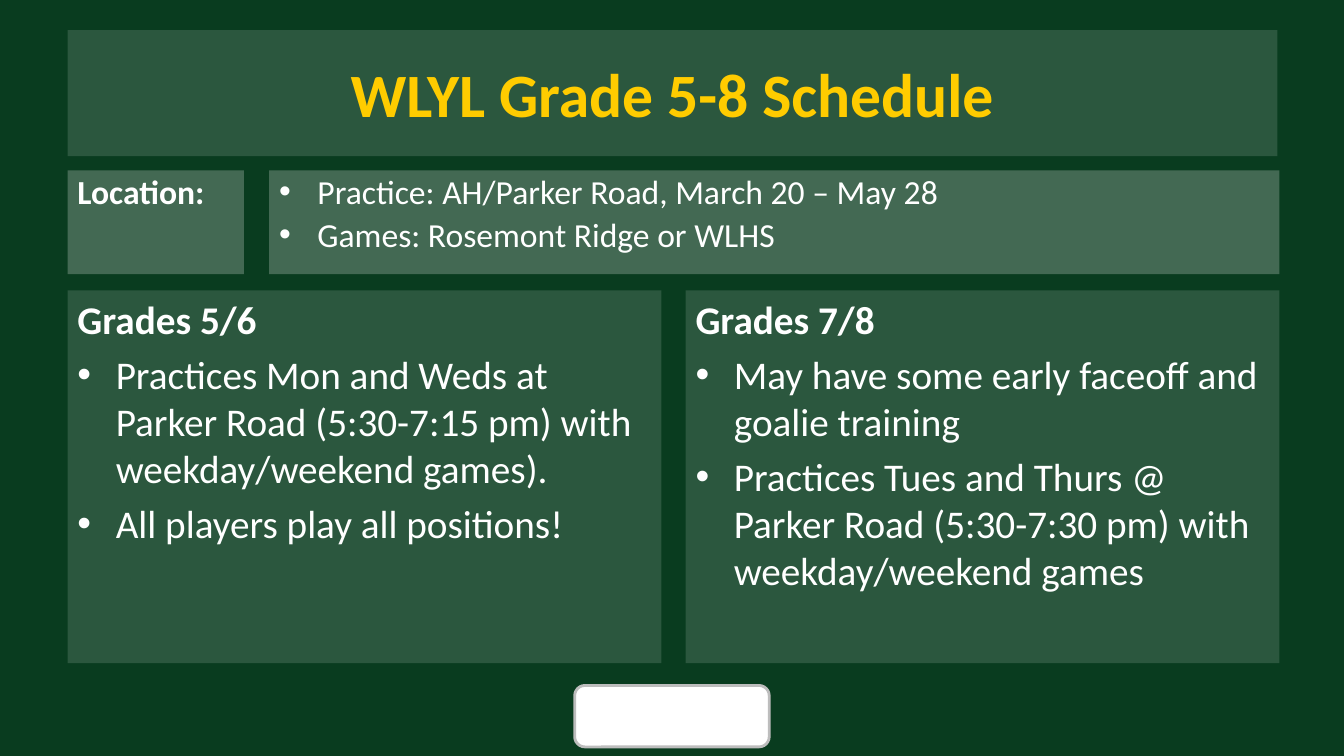
from lxml import etree
from pptx import Presentation
from pptx.dml.color import RGBColor
from pptx.enum import shapes, text
from pptx.oxml.ns import qn
from pptx.util import Inches, Pt

HUES = {"back": "093C1F", "panel": "F2F2F2", "gold": "FFCC00",
        "white": "FFFFFF", "edge": "BDBDBD"}
FACE = "Calibri"
LEFT, RIGHT, WIDE = 0.67, 6.8, 5.89
BAND, BODY = 1.69, 2.88  # tops of the location row and the grade panels


def hue(name):
    return RGBColor.from_string(HUES[name])


class Board:
    """One slide and the style of its parts."""

    def __init__(self, deck):
        self.slide = deck.slides.add_slide(deck.slide_layouts[5])
        fill = self.slide.background.fill
        fill.solid()
        fill.fore_color.rgb = hue("back")

    def tint(self, shape, alpha):
        shape.fill.solid()
        shape.fill.fore_color.rgb = hue("panel")
        color = shape._element.spPr.find(".//" + qn("a:srgbClr"))
        etree.SubElement(color, qn("a:alpha")).set("val", str(alpha * 1000))
        shape.line.fill.background()

    def style(self, para, size, color="white", bold=False):
        font = para.font
        font.name, font.size, font.bold = FACE, Pt(size), bold
        font.color.rgb = hue(color)

    def bullet(self, para):
        props = para._p.get_or_add_pPr()
        props.set("marL", str(Inches(0.38)))
        props.set("indent", str(-Inches(0.38)))
        etree.SubElement(props, qn("a:buFont")).set("typeface", "Arial")
        etree.SubElement(props, qn("a:buChar")).set("char", "•")

    def title(self, words, x, y, w, h):
        shape = self.slide.shapes.title
        shape.left, shape.top = Inches(x), Inches(y)
        shape.width, shape.height = Inches(w), Inches(h)
        self.tint(shape, 15)
        frame = shape.text_frame
        frame.text = words
        frame.auto_size = text.MSO_AUTO_SIZE.NONE
        frame.vertical_anchor = text.MSO_ANCHOR.MIDDLE
        para = frame.paragraphs[0]
        para.alignment = text.PP_ALIGN.CENTER
        self.style(para, 44, "gold", True)

    def panel(self, x, y, w, h, alpha, size, head=None, items=(), lead=1.0):
        shape = self.slide.shapes.add_shape(
            shapes.MSO_SHAPE.RECTANGLE, Inches(x), Inches(y), Inches(w), Inches(h))
        shape.shadow.inherit = False
        self.tint(shape, alpha)
        frame = shape.text_frame
        frame.word_wrap = True
        frame.vertical_anchor = text.MSO_ANCHOR.TOP
        lines = ([head] if head else []) + list(items)
        for i, words in enumerate(lines):
            para = frame.add_paragraph() if i else frame.paragraphs[0]
            para.text = words
            para.alignment = text.PP_ALIGN.LEFT
            if words != head:
                self.bullet(para)
            para.line_spacing = lead
            if i:
                para.space_before = Pt(size * 0.2)
            self.style(para, size, bold=words == head)

    def badge(self, x, y, w, h):
        shape = self.slide.shapes.add_shape(
            shapes.MSO_SHAPE.ROUNDED_RECTANGLE, Inches(x), Inches(y), Inches(w), Inches(h))
        shape.shadow.inherit = False
        shape.fill.solid()
        shape.fill.fore_color.rgb = hue("white")
        shape.line.color.rgb = hue("edge")
        shape.line.width = Pt(2)


def main():
    deck = Presentation()
    deck.slide_width, deck.slide_height = Inches(13.33), Inches(7.5)
    board = Board(deck)

    # Footer badge and title
    board.badge(5.7, 6.8, 1.93, 0.61)
    board.title("WLYL Grade 5-8 Schedule", LEFT, 0.3, 12, 1.25)

    # Location row
    board.panel(LEFT, BAND, 1.75, 1.03, 25, 24, head="Location:", lead=0.9)
    board.panel(2.67, BAND, 10.02, 1.03, 25, 24, lead=0.9, items=[
        "Practice: AH/Parker Road, March 20 – May 28",
        "Games: Rosemont Ridge or WLHS"])

    # Grade panels
    grades = [
        (LEFT, "Grades 5/6", [
            "Practices Mon and Weds at Parker Road (5:30-7:15 pm) "
            "with weekday/weekend games).",
            "All players play all positions!"]),
        (RIGHT, "Grades 7/8", [
            "May have some early faceoff and goalie training",
            "Practices Tues and Thurs @ Parker Road (5:30-7:30 pm) "
            "with weekday/weekend games"]),
    ]
    for x, head, items in grades:
        board.panel(x, BODY, WIDE, 3.7, 15, 28, head, items)

    deck.save("out.pptx")


if __name__ == "__main__":
    main()
